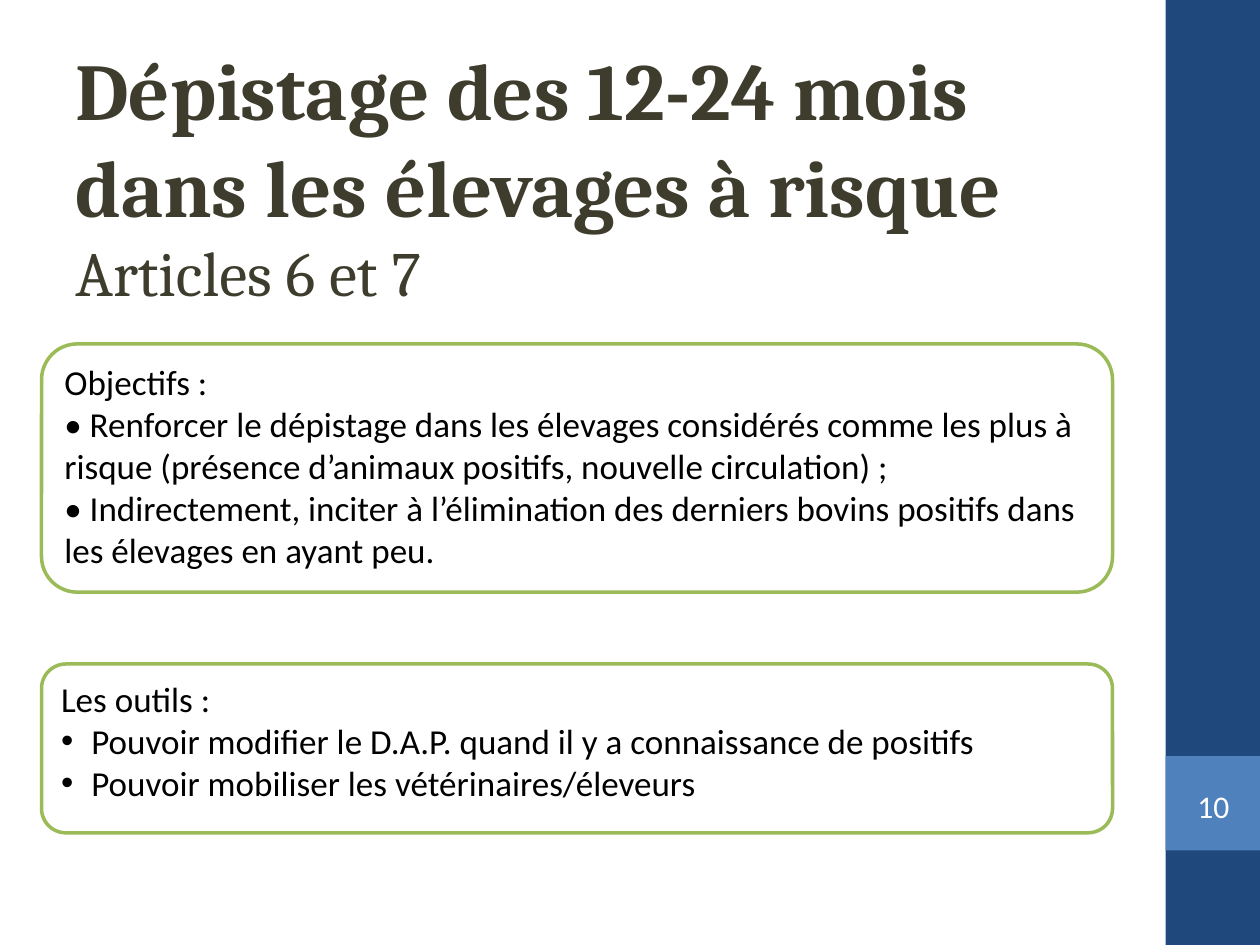
from lxml import etree
from pptx import Presentation
from pptx import util as u
from pptx.dml.color import RGBColor
from pptx.enum import shapes, text
from pptx.oxml.ns import qn

NAVY = RGBColor(0x1F, 0x49, 0x7D)
BLUE = RGBColor(0x4F, 0x81, 0xBD)
GREEN = RGBColor(0x9B, 0xBB, 0x59)
OLIVE = RGBColor(0x3E, 0x3D, 0x2D)
WHITE = RGBColor(0xFF, 0xFF, 0xFF)
BLACK = RGBColor(0x00, 0x00, 0x00)

BAND_LEFT, BAND_WIDTH = 9.25, 0.75
PANEL_LEFT, PANEL_WIDTH = 0.33, 8.5
BULLET_INDENT = 0.24

OBJECTIVES = [
    ("Objectifs :", False),
    ("• Renforcer le dépistage dans les élevages considérés comme les plus à "
     "risque (présence d’animaux positifs, nouvelle circulation) ;", False),
    ("• Indirectement, inciter à l’élimination des derniers bovins positifs "
     "dans les élevages en ayant peu.", False),
]
TOOLS = [
    ("Les outils :", False),
    ("Pouvoir modifier le D.A.P. quand il y a connaissance de positifs", True),
    ("Pouvoir mobiliser les vétérinaires/éleveurs", True),
]


def box(left, top, width, height):
    """Return the four lengths of a box given in inches."""
    return [u.Inches(value) for value in (left, top, width, height)]


def set_frame(frame, anchor, left=0.1, top=0.05, right=0.1, bottom=0.05):
    """Wrap a text frame and set its anchor and margins."""
    frame.word_wrap = True
    frame.auto_size = text.MSO_AUTO_SIZE.NONE
    frame.vertical_anchor = anchor
    frame.margin_left, frame.margin_top = u.Inches(left), u.Inches(top)
    frame.margin_right, frame.margin_bottom = u.Inches(right), u.Inches(bottom)


def add_line(frame, index, words, font, size, color, bold=False,
             align=text.PP_ALIGN.LEFT):
    """Write one paragraph of a single run and return the paragraph."""
    paragraph = frame.add_paragraph() if index else frame.paragraphs[0]
    paragraph.alignment = align
    run = paragraph.add_run()
    run.text = words
    run.font.name, run.font.size, run.font.bold = font, u.Pt(size), bold
    run.font.color.rgb = color
    return paragraph


def add_bullet(paragraph):
    """Give a paragraph a hanging round bullet."""
    properties = paragraph._p.get_or_add_pPr()
    indent = u.Inches(BULLET_INDENT)
    properties.set("marL", str(indent))
    properties.set("indent", str(-indent))
    etree.SubElement(properties, qn("a:buFont")).set("typeface", "Arial")
    etree.SubElement(properties, qn("a:buChar")).set("char", "•")


def add_block(slide, top, height, color):
    """Draw a plain block of the side band."""
    block = slide.shapes.add_shape(
        shapes.MSO_SHAPE.RECTANGLE, *box(BAND_LEFT, top, BAND_WIDTH, height))
    block.shadow.inherit = False
    block.fill.solid()
    block.fill.fore_color.rgb = color
    block.line.fill.background()


def add_title(slide):
    """Write the title and its subtitle."""
    frame = slide.shapes.add_textbox(*box(0.5, 0.91, 8.33, 1.25)).text_frame
    set_frame(frame, text.MSO_ANCHOR.MIDDLE, bottom=0.35)
    add_line(frame, 0, "Dépistage des 12-24 mois dans les élevages à risque",
             "Cambria", 46, OLIVE, bold=True)
    add_line(frame, 1, "Articles 6 et 7", "Cambria", 36, OLIVE)


def add_panel(slide, top, height, lines):
    """Draw an outlined rounded panel holding lines of text."""
    panel = slide.shapes.add_shape(
        shapes.MSO_SHAPE.ROUNDED_RECTANGLE,
        *box(PANEL_LEFT, top, PANEL_WIDTH, height))
    panel.shadow.inherit = False
    panel.adjustments[0] = 0.144
    panel.fill.solid()
    panel.fill.fore_color.rgb = WHITE
    panel.line.color.rgb = GREEN
    panel.line.width = u.Pt(2)
    set_frame(panel.text_frame, text.MSO_ANCHOR.TOP)
    for index, (words, bulleted) in enumerate(lines):
        paragraph = add_line(panel.text_frame, index, words, "Calibri", 20, BLACK)
        if bulleted:
            add_bullet(paragraph)


def add_page_number(slide, number):
    """Write the page number on the side band."""
    frame = slide.shapes.add_textbox(*box(9.33, 6.18, 0.6, 0.43)).text_frame
    set_frame(frame, text.MSO_ANCHOR.MIDDLE, 0, 0, 0, 0)
    add_line(frame, 0, number, "Calibri", 18, WHITE, align=text.PP_ALIGN.CENTER)


def main():
    """Build the slide and save it."""
    deck = Presentation()
    deck.slide_width, deck.slide_height = u.Inches(10), u.Inches(7.5)
    slide = deck.slides.add_slide(deck.slide_layouts[6])
    add_block(slide, 0, 7.5, NAVY)
    add_block(slide, 6, 0.75, BLUE)
    add_title(slide)
    add_panel(slide, 2.73, 1.97, OBJECTIVES)
    add_page_number(slide, "10")
    add_panel(slide, 5.27, 1.34, TOOLS)
    deck.save("out.pptx")


if __name__ == "__main__":
    main()
